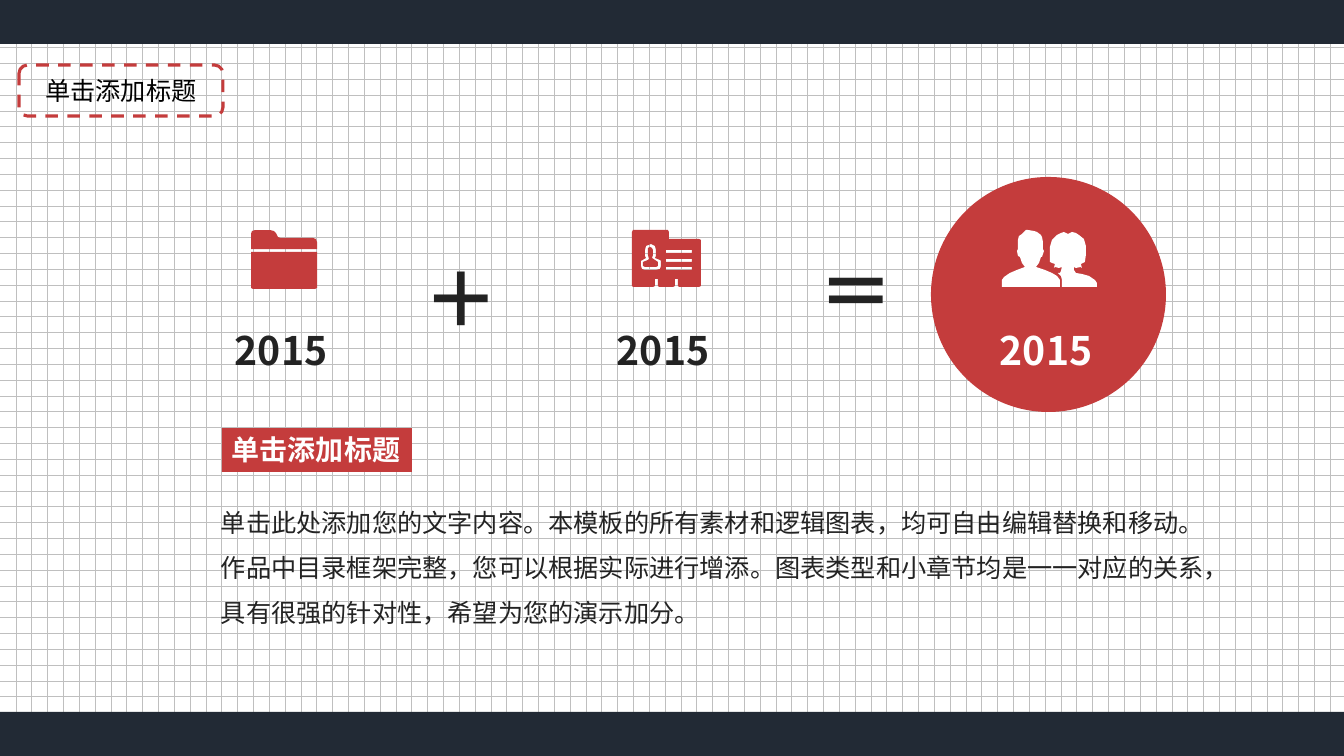
from dataclasses import dataclass

from lxml import etree
from pptx import Presentation
from pptx import util as u
from pptx.dml.color import RGBColor
from pptx.enum import dml, shapes, text
from pptx.oxml.ns import qn

EMU_PER_PX = 914400 / 100.8
WIDTH, HEIGHT = 1344, 756


def px(length):
    return u.Emu(round(length * EMU_PER_PX))


@dataclass(frozen=True)
class Theme:
    font: str = "Noto Sans CJK SC"
    navy: str = "222A35"
    red: str = "C43C3C"
    ink: str = "232323"
    black: str = "000000"
    white: str = "FFFFFF"
    grid: str = "BFBFBF"
    body: int = 18
    heading: int = 20
    year: int = 28
    operator: int = 54


class Deck:
    """Holds the theme and the current slide."""

    def __init__(self, theme):
        self.theme = theme
        self.prs = Presentation()
        self.prs.slide_width, self.prs.slide_height = px(WIDTH), px(HEIGHT)
        self.slide = self.prs.slides.add_slide(self.prs.slide_layouts[6])

    def grid_background(self):
        fill = self.slide.background.fill
        fill.patterned()
        fill.pattern = dml.MSO_PATTERN.DOTTED_GRID
        fill.fore_color.rgb = RGBColor.from_string(self.theme.grid)
        fill.back_color.rgb = RGBColor.from_string(self.theme.white)

    def paint(self, shape, fill):
        shape.shadow.inherit = False
        shape.fill.solid()
        shape.fill.fore_color.rgb = RGBColor.from_string(fill)
        shape.line.fill.background()

    def block(self, kind, box, fill):
        shape = self.slide.shapes.add_shape(kind, *map(px, box))
        self.paint(shape, fill)
        return shape

    def dashed_frame(self, box, color):
        frame = self.slide.shapes.add_shape(
            shapes.MSO_SHAPE.ROUNDED_RECTANGLE, *map(px, box))
        frame.shadow.inherit = False
        frame.fill.background()
        frame.line.color.rgb = RGBColor.from_string(color)
        frame.line.width = u.Pt(2.25)
        frame.line.dash_style = dml.MSO_LINE.DASH
        return frame

    def set_words(self, shape, words, size, color, bold=False, wrap=False,
                  align=text.PP_ALIGN.LEFT, anchor=text.MSO_ANCHOR.TOP, spacing=None):
        frame = shape.text_frame
        frame.text = words
        frame.word_wrap = wrap
        frame.vertical_anchor = anchor
        paragraph = frame.paragraphs[0]
        paragraph.alignment = align
        paragraph.line_spacing = spacing
        font = paragraph.runs[0].font
        font.size, font.bold, font.name = u.Pt(size), bold, self.theme.font
        font.color.rgb = RGBColor.from_string(color)
        # East Asian glyphs take their typeface from a:ea
        east_asian = etree.SubElement(font._element, qn("a:ea"))
        east_asian.set("typeface", self.theme.font)

    def label(self, box, words, size, color, **style):
        self.set_words(self.slide.shapes.add_textbox(*map(px, box)),
                       words, size, color, **style)

    def icon(self, left, top, parts, fill):
        """Each part is a list of closed contours; inner contours cut holes."""
        group = self.slide.shapes.add_group_shape()
        for contours in parts:
            builder = group.shapes.build_freeform(*contours[0][0], scale=EMU_PER_PX)
            for number, contour in enumerate(contours):
                if number:
                    builder.move_to(*contour[0])
                builder.add_line_segments(contour[1:], close=True)
            self.paint(builder.convert_to_shape(px(left), px(top)), fill)


# Icon outlines, px from each icon's top left corner
FOLDER_LID = [(62, 8), (30, 8), (27, 7), (25, 3), (23, 1), (19, 0), (4, 0), (1, 1),
              (0, 4), (0, 19), (66, 19), (66, 12), (65, 9)]
FOLDER_FRONT = [(0, 22), (66, 22), (66, 58), (64, 59), (2, 59), (0, 58)]

CARD = [(67, 9), (37, 9), (37, 2), (36, 0), (1, 0), (0, 2), (0, 56), (1, 57), (21, 57),
        (23, 56), (23, 49), (26, 49), (26, 56), (27, 57), (41, 57), (43, 56), (43, 49),
        (46, 49), (46, 56), (47, 57), (67, 57), (69, 56), (69, 10)]
CARD_PORTRAIT = [(29, 36), (28, 39), (24, 40), (13, 40), (10, 39), (9, 36), (9, 31),
                 (14, 28), (13, 26), (13, 20), (14, 16), (19, 14), (23, 16), (24, 20),
                 (24, 26), (23, 28), (28, 30), (29, 31)]
CARD_LINES = [[(34, y), (60, y), (60, y + 3), (34, y + 3)] for y in (20, 29, 37)]
CARD_PERSON = [(21, 25), (21, 20), (20, 18), (18, 17), (16, 18), (16, 20), (16, 25),
               (17, 29), (16, 30), (11, 32), (11, 36), (13, 37), (24, 37), (26, 36),
               (26, 32), (20, 28)]

WOMAN = [(95, 53), (93, 50), (87, 46), (80, 44), (74, 43), (72, 40), (72, 37), (74, 38),
         (79, 37), (80, 38), (79, 34), (81, 33), (83, 32), (84, 25), (84, 16), (82, 9),
         (77, 5), (74, 3), (70, 2), (66, 4), (62, 2), (59, 3), (55, 5), (50, 10),
         (48, 17), (48, 32), (50, 33), (53, 34), (52, 38), (53, 37), (57, 38), (60, 37),
         (59, 41), (58, 43), (56, 43), (59, 46), (60, 50), (60, 57), (95, 57)]
MAN = [(50, 43), (43, 40), (34, 37), (37, 33), (39, 27), (40, 27), (42, 21), (41, 19),
       (41, 12), (40, 7), (39, 5), (35, 2), (32, 1), (26, 0), (24, 0), (22, 2), (20, 4),
       (17, 6), (16, 10), (16, 19), (15, 21), (16, 26), (18, 27), (20, 33), (23, 37),
       (15, 40), (8, 43), (2, 47), (0, 50), (0, 57), (58, 57), (58, 50), (55, 46)]

BODY = ("单击此处添加您的文字内容。本模板的所有素材和逻辑图表，均可自由编辑替换和移动。"
        "作品中目录框架完整，您可以根据实际进行增添。图表类型和小章节均是一一对应的关系，"
        "具有很强的针对性，希望为您的演示加分。")


def main():
    theme = Theme()
    deck = Deck(theme)

    # Background and edge bands
    deck.grid_background()
    band = 44
    for top in (0, HEIGHT - band):
        deck.block(shapes.MSO_SHAPE.RECTANGLE, (0, top, WIDTH, band), theme.navy)

    # Slide title
    title = deck.dashed_frame((19, 65, 204, 51), theme.red)
    deck.set_words(title, "单击添加标题", theme.body, theme.black, wrap=True,
                   align=text.PP_ALIGN.CENTER, anchor=text.MSO_ANCHOR.MIDDLE)

    # Equation: folder + card = people
    deck.block(shapes.MSO_SHAPE.OVAL, (931, 177, 235, 235), theme.red)
    terms = [
        (251, 225, [[FOLDER_LID], [FOLDER_FRONT]], theme.red, theme.ink),
        (632, 607, [[CARD_PERSON], [CARD, CARD_PORTRAIT, *CARD_LINES]],
         theme.red, theme.ink),
        (1002, 990, [[WOMAN], [MAN]], theme.white, theme.white),
    ]
    for icon_left, year_left, parts, icon_color, year_color in terms:
        deck.icon(icon_left, 230, parts, icon_color)
        deck.label((year_left, 321, 118, 57), "2015", theme.year, year_color, bold=True)
    for left, top, sign in ((414, 247, "＋"), (809, 240, "＝")):
        deck.label((left, top, 97, 102), sign, theme.operator, theme.ink, bold=True)

    # Heading and description
    heading = deck.block(shapes.MSO_SHAPE.RECTANGLE, (222, 428, 190, 44), theme.red)
    deck.set_words(heading, "单击添加标题", theme.heading, theme.white, bold=True)
    deck.label((211, 487, 1003, 147), BODY, theme.body, theme.ink, wrap=True, spacing=1.5)

    deck.prs.save("out.pptx")


if __name__ == "__main__":
    main()
